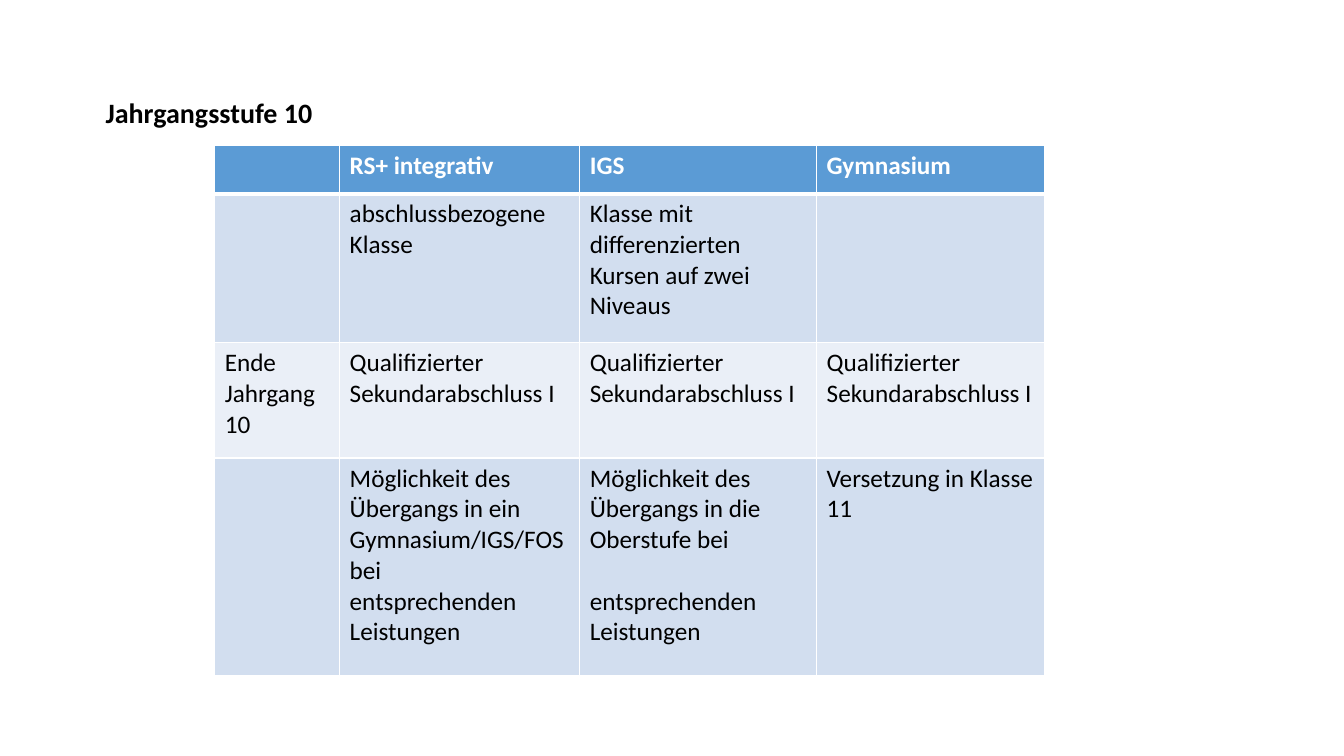
from lxml import etree
from pptx import Presentation
from pptx import util as u
from pptx.dml.color import RGBColor
from pptx.enum import text as t
from pptx.oxml import ns

COLORS = {
    "header": "5B9BD5",
    "band_dark": "D2DEEF",
    "band_light": "EAEFF7",
    "border": "FFFFFF",
    "header_text": "FFFFFF",
    "text": "000000",
}
FONT = "Calibri"
COLUMN_WIDTHS = [3.15, 6.05, 5.97, 5.74]
ROW_HEIGHTS = [1.22, 3.76, 2.9, 5.49]
DEGREE = "Qualifizierter\nSekundarabschluss I"
ROWS = [
    ["", "RS+ integrativ", "IGS", "Gymnasium"],
    ["", "abschlussbezogene\nKlasse",
     "Klasse mit differenzierten\nKursen auf zwei Niveaus", ""],
    ["Ende\nJahrgang\n10", DEGREE, DEGREE, DEGREE],
    ["",
     "Möglichkeit des Übergangs in ein Gymnasium/IGS/FOS\nbei\nentsprechenden\nLeistungen",
     "Möglichkeit des Übergangs in die Oberstufe bei\n\nentsprechenden\nLeistungen",
     "Versetzung in Klasse 11"],
]


def write_text(frame, content, size=18, color="text", bold=False, line_spacing=None):
    """Write one paragraph per line; a double line break becomes space of one line."""
    paragraph = None
    for block_number, block in enumerate(content.split("\n\n")):
        for line_number, line in enumerate(block.split("\n")):
            paragraph = frame.add_paragraph() if paragraph else frame.paragraphs[0]
            paragraph.alignment = t.PP_ALIGN.LEFT
            if line_spacing:
                paragraph.line_spacing = line_spacing
            if block_number and not line_number:
                paragraph.space_before = u.Pt(1.22 * size)
            font = paragraph.font
            if line:
                run = paragraph.add_run()
                run.text = line
                font = run.font
            font.name = FONT
            font.size = u.Pt(size)
            font.bold = bold
            font.color.rgb = RGBColor.from_string(COLORS[color])


def set_borders(cell, top, bottom):
    """Draw the four cell borders; top and bottom are widths in points."""
    properties = cell._tc.get_or_add_tcPr()
    widths = {"lnL": 1, "lnR": 1, "lnT": top, "lnB": bottom}
    for position, (side, width) in enumerate(widths.items()):
        line = etree.Element(ns.qn(f"a:{side}"), w=str(u.Pt(width)))
        fill = etree.SubElement(line, ns.qn("a:solidFill"))
        etree.SubElement(fill, ns.qn("a:srgbClr"), val=COLORS["border"])
        properties.insert(position, line)


def add_title(slide, left, top, width, height):
    box = slide.shapes.add_textbox(u.Cm(left), u.Cm(top), u.Cm(width), u.Cm(height))
    box.text_frame.word_wrap = True
    box.text_frame.vertical_anchor = t.MSO_ANCHOR.MIDDLE
    write_text(box.text_frame, "Jahrgangsstufe 10", size=20, bold=True, line_spacing=0.9)


def add_degree_table(slide, left, top):
    table = slide.shapes.add_table(
        len(ROW_HEIGHTS), len(COLUMN_WIDTHS), u.Cm(left), u.Cm(top),
        u.Cm(sum(COLUMN_WIDTHS)), u.Cm(sum(ROW_HEIGHTS))).table
    for column, width in zip(table.columns, COLUMN_WIDTHS):
        column.width = u.Cm(width)
    for index, (row, height) in enumerate(zip(table.rows, ROW_HEIGHTS)):
        row.height = u.Cm(height)
        header = index == 0
        band = "header" if header else "band_dark" if index % 2 else "band_light"
        for cell, content in zip(row.cells, ROWS[index]):
            cell.fill.solid()
            cell.fill.fore_color.rgb = RGBColor.from_string(COLORS[band])
            set_borders(cell, top=3 if index == 1 else 1, bottom=3 if header else 1)
            write_text(cell.text_frame, content, bold=header,
                       color="header_text" if header else "text")


def main():
    presentation = Presentation()
    presentation.slide_width = u.Cm(33.87)
    presentation.slide_height = u.Cm(19.05)
    slide = presentation.slides.add_slide(presentation.slide_layouts[6])
    add_title(slide, 2.41, 1.04, 29.21, 3.68)
    add_degree_table(slide, 5.41, 3.66)
    presentation.save("out.pptx")


if __name__ == "__main__":
    main()
